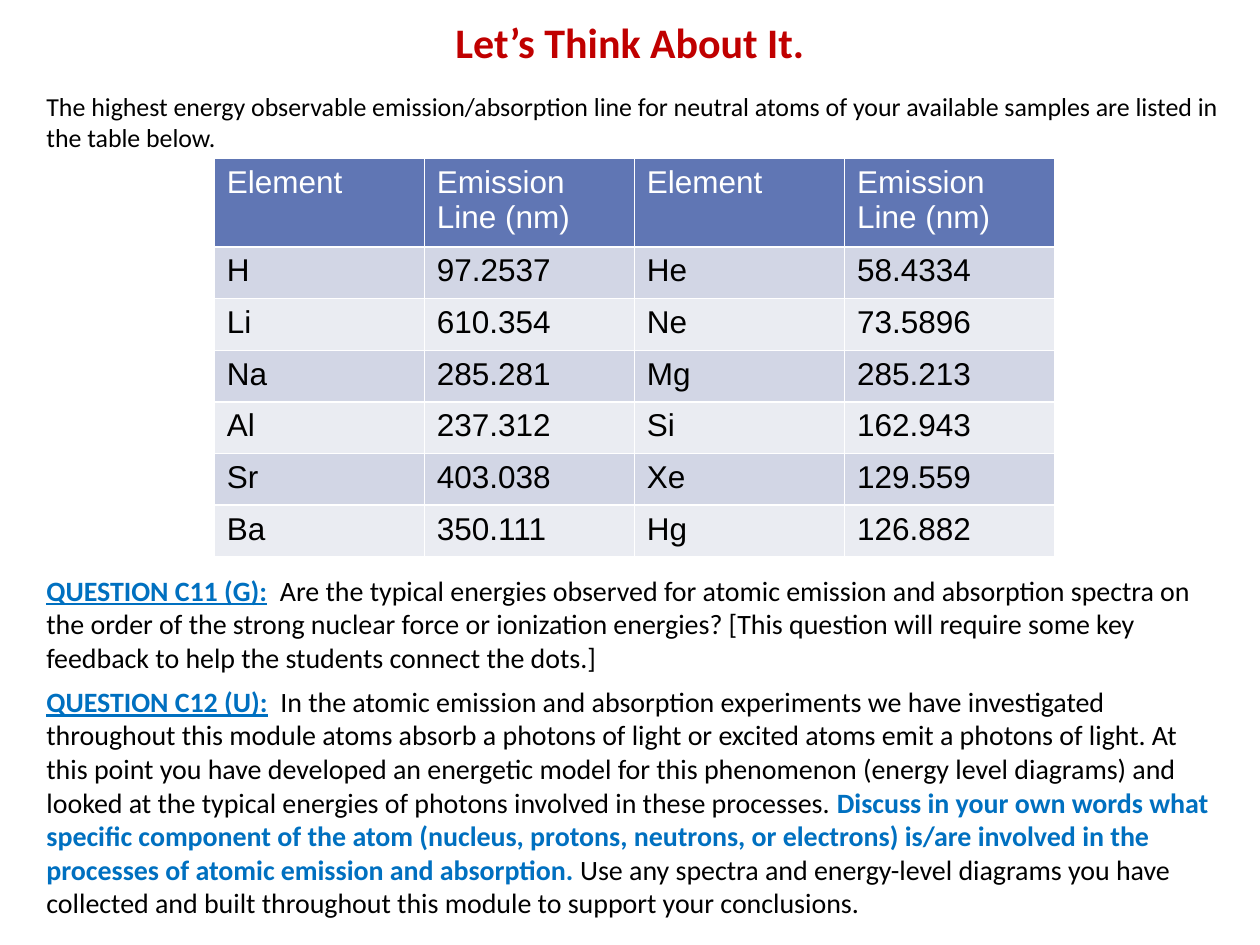
from pptx import Presentation
from pptx.dml.color import RGBColor
from pptx.enum.text import MSO_ANCHOR, PP_ALIGN
from pptx.util import Inches, Pt

RED = RGBColor(0xC0, 0x00, 0x00)
BLUE = RGBColor(0x00, 0x70, 0xC0)
BLACK = RGBColor(0x00, 0x00, 0x00)
WHITE = RGBColor(0xFF, 0xFF, 0xFF)
HEADER_FILL = RGBColor(0x60, 0x76, 0xB4)
BAND_FILLS = [RGBColor(0xD2, 0xD6, 0xE5), RGBColor(0xEA, 0xEC, 0xF2)]

INTRO = (
    "The highest energy observable emission/absorption line for neutral atoms "
    "of your available samples are listed in the table below."
)

EMISSION_LINES = [
    ("Element", "Emission Line (nm)", "Element", "Emission Line (nm)"),
    ("H", "97.2537", "He", "58.4334"),
    ("Li", "610.354", "Ne", "73.5896"),
    ("Na", "285.281", "Mg", "285.213"),
    ("Al", "237.312", "Si", "162.943"),
    ("Sr", "403.038", "Xe", "129.559"),
    ("Ba", "350.111", "Hg", "126.882"),
]

QUESTIONS = [
    ("QUESTION C11 (G):", [
        ("Are the typical energies observed for atomic emission and absorption "
         "spectra on the order of the strong nuclear force or ionization energies? "
         "[This question will require some key feedback to help the students "
         "connect the dots.]", False),
    ]),
    ("QUESTION C12 (U):", [
        ("In the atomic emission and absorption experiments we have investigated "
         "throughout this module atoms absorb a photons of light or excited atoms "
         "emit a photons of light. At this point you have developed an energetic "
         "model for this phenomenon (energy level diagrams) and looked at the "
         "typical energies of photons involved in these processes. ", False),
        ("Discuss in your own words what specific component of the atom (nucleus, "
         "protons, neutrons, or electrons) is/are involved in the processes of "
         "atomic emission and absorption.", True),
        (" Use any spectra and energy-level diagrams you have collected and built "
         "throughout this module to support your conclusions.", False),
    ]),
]


def add_span(para, text, size=16, font="Calibri", color=BLACK, bold=False, underline=False):
    span = para.add_run()
    span.text = text
    span.font.size = Pt(size)
    span.font.name = font
    span.font.color.rgb = color
    span.font.bold = bold
    span.font.underline = underline


def add_frame(page, left, top, width, height, anchor=MSO_ANCHOR.TOP):
    box = page.shapes.add_textbox(left, top, width, height)
    frame = box.text_frame
    frame.word_wrap = True
    frame.vertical_anchor = anchor
    return frame


def add_title(page, *area):
    para = add_frame(page, *area, anchor=MSO_ANCHOR.MIDDLE).paragraphs[0]
    para.alignment = PP_ALIGN.CENTER
    add_span(para, "Let’s Think About It.", size=24, color=RED, bold=True)


def add_intro(page, *area):
    add_span(add_frame(page, *area).paragraphs[0], INTRO, size=14.8)


def add_emission_table(page, left, top, width, header_height, row_height):
    rows, columns = len(EMISSION_LINES), len(EMISSION_LINES[0])
    height = header_height + row_height * (rows - 1)
    table = page.shapes.add_table(rows, columns, left, top, width, height).table
    for r, values in enumerate(EMISSION_LINES):
        header = r == 0
        table.rows[r].height = header_height if header else row_height
        for c, value in enumerate(values):
            cell = table.cell(r, c)
            cell.fill.solid()
            cell.fill.fore_color.rgb = HEADER_FILL if header else BAND_FILLS[(r - 1) % 2]
            add_span(cell.text_frame.paragraphs[0], value, size=18, font="Arial",
                     color=WHITE if header else BLACK)


def add_questions(page, *area):
    frame = add_frame(page, *area)
    for index, (label, parts) in enumerate(QUESTIONS):
        para = frame.add_paragraph() if index else frame.paragraphs[0]
        para.space_after = Pt(6)
        add_span(para, label, color=BLUE, bold=True, underline=True)
        add_span(para, "  ", color=BLUE, bold=True)
        for text, stressed in parts:
            add_span(para, text, color=BLUE if stressed else BLACK, bold=stressed)


def main():
    deck = Presentation()
    deck.slide_width = Inches(10)
    deck.slide_height = Inches(7.5)
    page = deck.slides.add_slide(deck.slide_layouts[6])
    add_title(page, Inches(0.5), Inches(0.08), Inches(9), Inches(0.5))
    add_intro(page, Inches(0.27), Inches(0.67), Inches(9.58), Inches(0.58))
    add_questions(page, Inches(0.27), Inches(4.5), Inches(9.52), Inches(2.94))
    add_emission_table(page, Inches(1.7), Inches(1.26), Inches(6.67),
                       header_height=Inches(0.7), row_height=Inches(0.41))
    deck.save("out.pptx")


if __name__ == "__main__":
    main()
